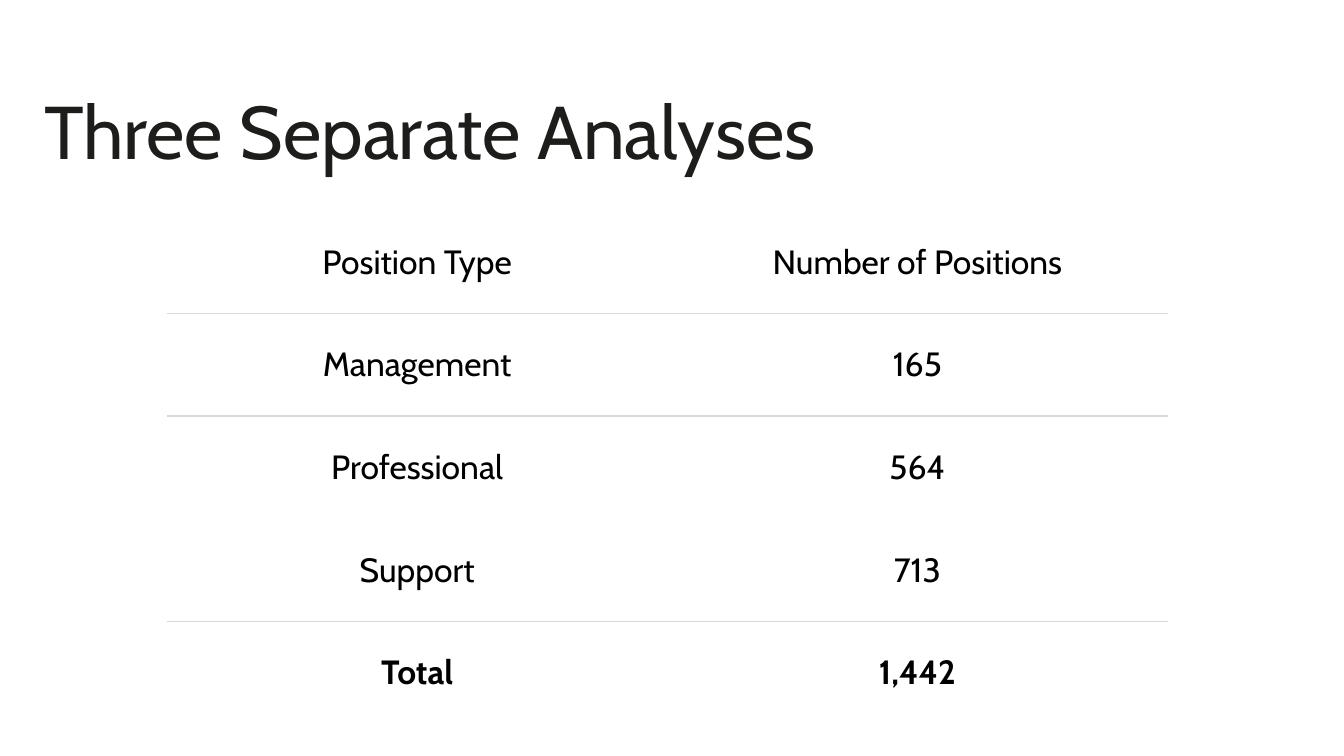
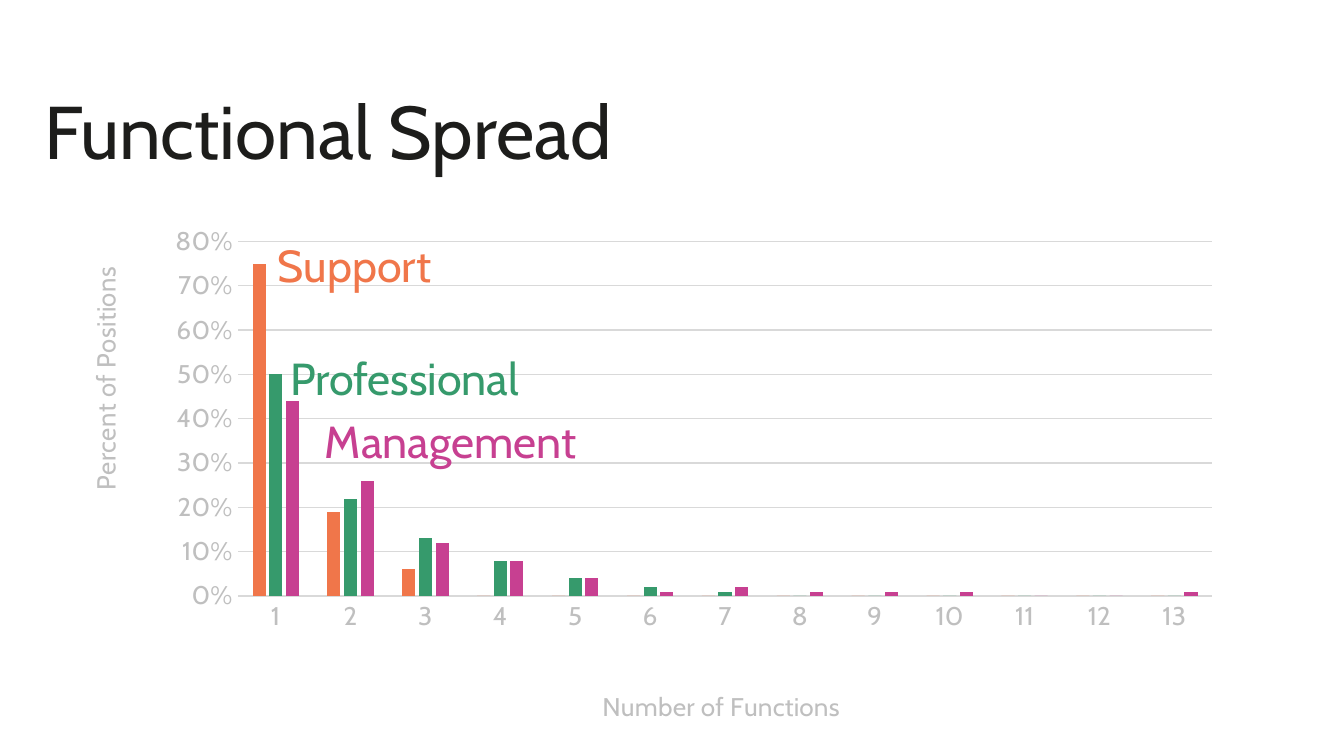
from lxml import etree
from pptx import Presentation
from pptx.chart.data import CategoryChartData
from pptx.dml.color import RGBColor
from pptx.enum import chart as charts, text
from pptx.oxml import ns
from pptx.util import Pt

FONT = "Cabin"
COLORS = {
    "background": "FFFFFF",
    "title": "1D1D1B",
    "body": "000000",
    "rule": "D9D9D9",
    "axis": "BFBFBF",
    "Support": "F0764A",
    "Professional": "369A6C",
    "Management": "C74091",
}
POSITIONS = [
    ("Position Type", "Number of Positions"),
    ("Management", "165"),
    ("Professional", "564"),
    ("Support", "713"),
    ("Total", "1,442"),
]
RULED_ROWS = (0, 3)
SPREAD = {
    "Support": [0.75, 0.19, 0.06] + [0] * 10,
    "Professional": [0.5, 0.22, 0.13, 0.08, 0.04, 0.02, 0.01] + [0] * 6,
    "Management": [0.44, 0.26, 0.12, 0.08, 0.04, 0.01, 0.02,
                   0.01, 0.01, 0.01, 0, 0, 0.01],
}
SERIES_LABELS = {
    "Management": (167, 218, 194, 36),
    "Professional": (148.3, 184.3, 213, 36),
    "Support": (141.8, 123.8, 158, 36),
}


def color(name):
    return RGBColor.from_string(COLORS[name])


def style_font(font, size, color_name, bold=False):
    font.name = FONT
    font.size = Pt(size)
    font.bold = bold
    font.color.rgb = color(color_name)


def add_run(paragraph, words, size, color_name, bold=False):
    run = paragraph.add_run()
    run.text = words
    style_font(run.font, size, color_name, bold)


def add_text(slide, box, words, size, color_name, anchor=text.MSO_ANCHOR.TOP):
    frame = slide.shapes.add_textbox(*map(Pt, box)).text_frame
    frame.word_wrap = True
    frame.vertical_anchor = anchor
    add_run(frame.paragraphs[0], words, size, color_name)
    return frame


def add_titled_slide(deck, title):
    slide = deck.slides.add_slide(deck.slide_layouts[6])
    slide.background.fill.solid()
    slide.background.fill.fore_color.rgb = color("background")
    frame = add_text(slide, (16.5, 35.3, 682, 65.5), title, 40, "title",
                     text.MSO_ANCHOR.BOTTOM)
    frame.margin_top = frame.margin_bottom = Pt(7.2)
    return slide


def add_rule(cell, side):
    properties = cell._tc.get_or_add_tcPr()
    line = etree.SubElement(properties, ns.qn(f"a:{side}"), w=str(Pt(1)))
    fill = etree.SubElement(line, ns.qn("a:solidFill"))
    etree.SubElement(fill, ns.qn("a:srgbClr"), val=COLORS["rule"])


def add_positions_table(slide):
    rows, columns = len(POSITIONS), len(POSITIONS[0])
    table = slide.shapes.add_table(
        rows, columns, Pt(89.5), Pt(113), Pt(536), Pt(275)).table
    table.first_row = table.horz_banding = False
    style = table._tbl.tblPr.find(ns.qn("a:tableStyleId"))
    style.text = "{2D5ABB26-0587-4C30-8999-92F81FD0307C}"
    for row, entries in enumerate(POSITIONS):
        for column, entry in enumerate(entries):
            cell = table.cell(row, column)
            cell.vertical_anchor = text.MSO_ANCHOR.MIDDLE
            cell.margin_top = cell.margin_bottom = Pt(5)
            if row - 1 in RULED_ROWS:
                add_rule(cell, "lnT")
            if row in RULED_ROWS:
                add_rule(cell, "lnB")
            cell.fill.background()
            paragraph = cell.text_frame.paragraphs[0]
            paragraph.alignment = text.PP_ALIGN.CENTER
            add_run(paragraph, entry, 18, "body", row == rows - 1)


def place(element, index, inner=False, **fractions):
    layout = element.find(ns.qn("c:layout"))
    if layout is None:
        layout = etree.Element(ns.qn("c:layout"))
        element.insert(index, layout)
    manual = etree.SubElement(layout, ns.qn("c:manualLayout"))
    if inner:
        etree.SubElement(manual, ns.qn("c:layoutTarget"), val="inner")
    for mode in ("xMode", "yMode"):
        etree.SubElement(manual, ns.qn(f"c:{mode}"), val="edge")
    for key, fraction in fractions.items():
        etree.SubElement(manual, ns.qn(f"c:{key}"), val=str(fraction))


def style_axis(axis, title, x, y):
    axis.major_tick_mark = axis.minor_tick_mark = charts.XL_TICK_MARK.NONE
    style_font(axis.tick_labels.font, 14, "axis")
    frame = axis.axis_title.text_frame
    add_run(frame.paragraphs[0], title, 14, "axis")
    place(axis.axis_title._element, 1, x=x, y=y)
    return frame


def style_line(line):
    line.color.rgb = color("rule")
    line.width = Pt(0.75)


def add_spread_chart(slide):
    data = CategoryChartData(number_format="0%")
    data.categories = [str(count) for count in range(1, 14)]
    for name, shares in SPREAD.items():
        data.add_series(name, shares)
    chart = slide.shapes.add_chart(
        charts.XL_CHART_TYPE.COLUMN_CLUSTERED,
        Pt(31.7), Pt(106.5), Pt(627), Pt(285), data).chart
    chart.has_legend = chart.has_title = False
    style_font(chart.font, 18, "axis")
    place(chart._chartSpace.chart.plotArea, 0, inner=True,
          x=0.153, y=0.082, w=0.832, h=0.68)

    plot = chart.plots[0]
    plot.gap_width = 219
    plot.overlap = -27
    plot.vary_by_categories = False
    for series in plot.series:
        series.format.fill.solid()
        series.format.fill.fore_color.rgb = color(series.name)
        series.invert_if_negative = False

    functions = chart.category_axis
    style_axis(functions, "Number of Functions", 0.46, 0.93)
    style_line(functions.format.line)

    share = chart.value_axis
    frame = style_axis(share, "Percent of Positions", 0.02, 0.13)
    frame._txBody.bodyPr.set("rot", "-5400000")
    frame._txBody.bodyPr.set("vert", "horz")
    share.minimum_scale, share.maximum_scale, share.major_unit = 0, 0.8, 0.1
    share.tick_labels.number_format = "0%"
    share.tick_labels.number_format_is_linked = False
    share.format.line.fill.background()
    style_line(share.major_gridlines.format.line)


def main():
    deck = Presentation()
    deck.slide_width, deck.slide_height = Pt(720), Pt(405)

    analyses = add_titled_slide(deck, "Three Separate Analyses")
    add_positions_table(analyses)

    spread = add_titled_slide(deck, "Functional Spread")
    add_spread_chart(spread)
    for name, box in SERIES_LABELS.items():
        add_text(spread, box, name, 24, name)

    deck.save("out.pptx")


if __name__ == "__main__":
    main()
